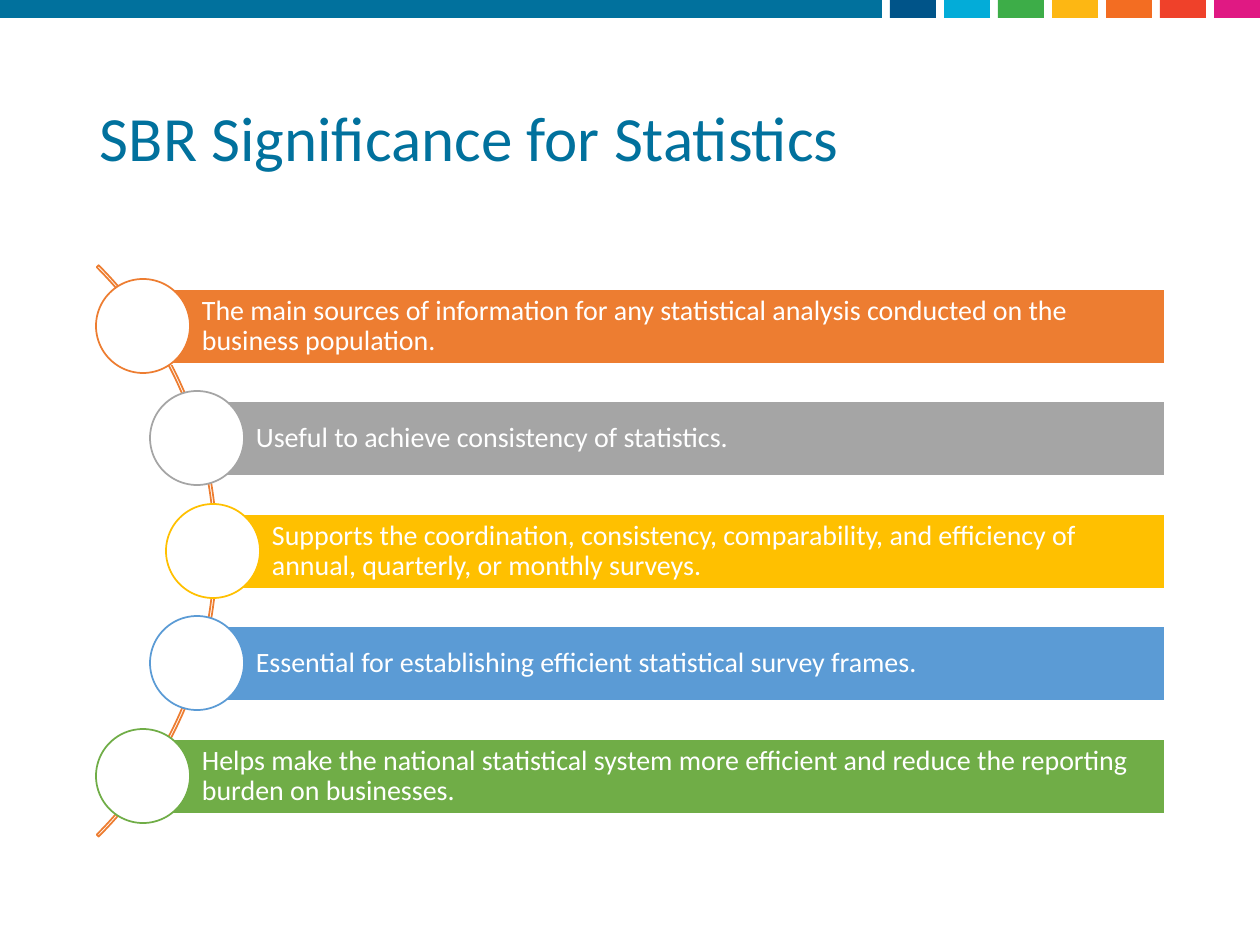
"""Builds the slide on the significance of the SBR for statistics."""
from pptx import Presentation
from pptx import util as u
from pptx.dml.color import RGBColor
from pptx.enum import shapes, text

SCALE = 914400 / 126
FONT = "Calibri"
TEAL, WHITE, ORANGE = "01719D", "FFFFFF", "ED7D31"
SWATCHES = ["005489", "03ACD8", "3DAD48", "FDB713", "F36D22", "EF412A", "E01983"]
POINTS = [
    (143, ORANGE, "The main sources of information for any statistical analysis "
                  "conducted on the business population."),
    (197, "A5A5A5", "Useful to achieve consistency of statistics."),
    (213, "FFC000", "Supports the coordination, consistency, comparability, and "
                    "efficiency of annual, quarterly, or monthly surveys."),
    (197, "5B9BD5", "Essential for establishing efficient statistical survey frames."),
    (143, "70AD47", "Helps make the national statistical system more efficient and "
                    "reduce the reporting burden on businesses."),
]


def px(value):
    return u.Emu(round(value * SCALE))


def rgb(value):
    return RGBColor.from_string(value)


def write(shape, words, size, color, insets):
    frame = shape.text_frame
    frame.word_wrap = True
    frame.vertical_anchor = text.MSO_ANCHOR.MIDDLE
    frame.margin_left, frame.margin_top, frame.margin_right, frame.margin_bottom = map(px, insets)
    paragraph = frame.paragraphs[0]
    paragraph.alignment = text.PP_ALIGN.LEFT
    paragraph.line_spacing = 0.9
    run = paragraph.add_run()
    run.text = words
    run.font.name = FONT
    run.font.size = u.Pt(size)
    run.font.color.rgb = rgb(color)


class Deck:
    def __init__(self, width, height):
        self.presentation = Presentation()
        self.presentation.slide_width = px(width)
        self.presentation.slide_height = px(height)
        self.slide = self.presentation.slides.add_slide(self.presentation.slide_layouts[6])

    def shape(self, kind, left, top, width, height, fill=None, line=None):
        shape = self.slide.shapes.add_shape(kind, px(left), px(top), px(width), px(height))
        shape.shadow.inherit = False
        if fill:
            shape.fill.solid()
            shape.fill.fore_color.rgb = rgb(fill)
        else:
            shape.fill.background()
        if line:
            shape.line.color.rgb = rgb(line)
            shape.line.width = u.Pt(1)
        else:
            shape.line.fill.background()
        return shape

    def bar(self, left, top, width, height, fill, line=None):
        return self.shape(shapes.MSO_SHAPE.RECTANGLE, left, top, width, height, fill, line)

    def circle(self, center_x, center_y, diameter, line):
        radius = diameter // 2
        return self.shape(shapes.MSO_SHAPE.OVAL, center_x - radius, center_y - radius,
                          diameter, diameter, WHITE, line)

    def arc(self, left, top, diameter, line):
        arc = self.shape(shapes.MSO_SHAPE.BLOCK_ARC, left, top, diameter, diameter, line=line)
        for index, value in enumerate((189, 27, 0.0034)):
            arc.adjustments[index] = value

    def title(self, words, left, top, width, height):
        box = self.slide.shapes.add_textbox(px(left), px(top), px(width), px(height))
        write(box, words, size=36, color=TEAL, insets=(13, 6, 13, 6))

    def point(self, center_x, center_y, color, words):
        bar = self.bar(center_x, center_y - 37, 1165 - center_x, 75, color, WHITE)
        write(bar, words, size=16, color=WHITE, insets=(59, 5, 5, 5))
        self.circle(center_x, center_y, 94, color)


def main():
    deck = Deck(1260, 945)
    deck.bar(0, 0, 882, 18, TEAL)
    for index, color in enumerate(SWATCHES):
        deck.bar(890 + 54 * index, 0, 46, 18, color)
    deck.title("SBR Significance for Statistics", 87, 50, 1086, 183)
    deck.arc(-591, 147, 808, ORANGE)
    for index, (center_x, color, words) in enumerate(POINTS):
        deck.point(center_x, 326 + 225 * index // 2, color, words)
    deck.presentation.save("out.pptx")


if __name__ == "__main__":
    main()
